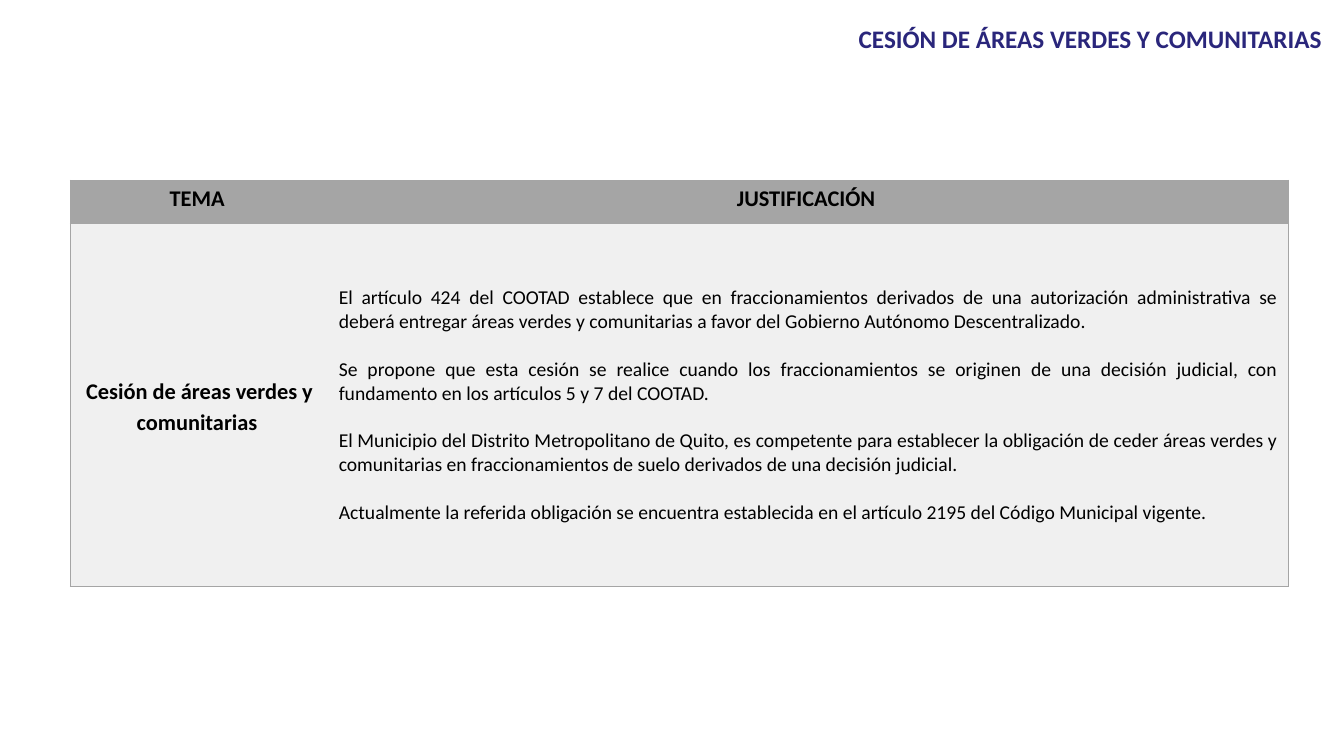
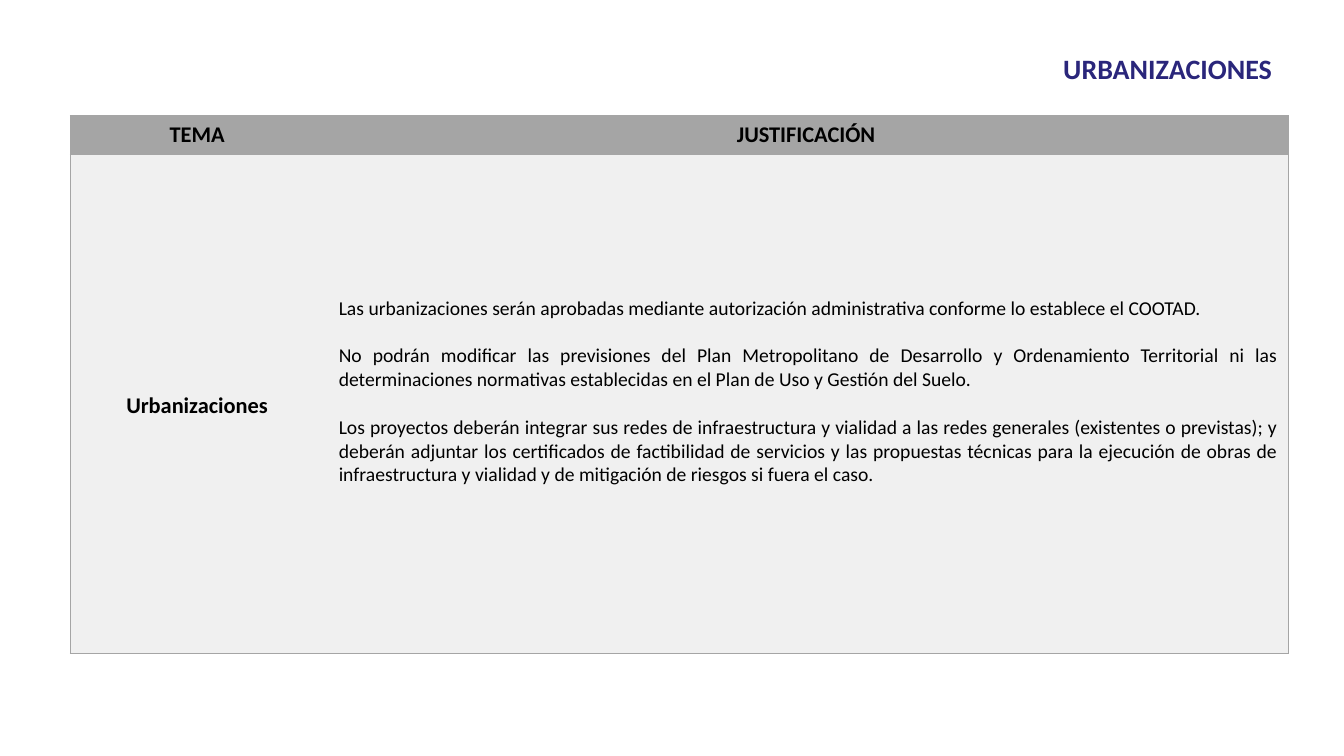
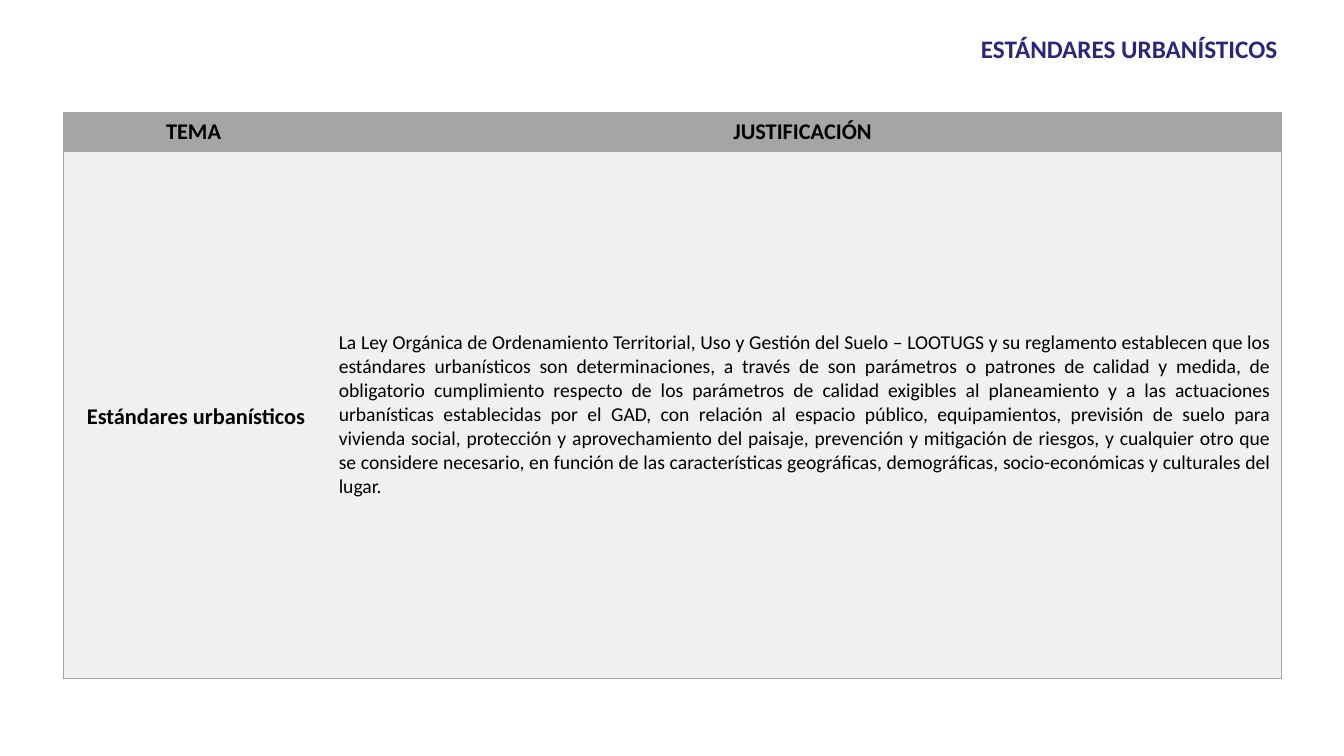
from dataclasses import dataclass

from lxml import etree
from pptx import Presentation
from pptx import util as u
from pptx.dml.color import RGBColor
from pptx.enum import text
from pptx.oxml import ns

# Shared style: 100 px to the inch
EMU_PER_PX = 9144
SLIDE_WIDTH, SLIDE_HEIGHT = 1333, 750
FONT = "Calibri"
NAVY, BLACK, GRAY, PALE = "2A267B", "000000", "A5A5A5", "F0F0F0"
HEADINGS = ("TEMA ", "JUSTIFICACIÓN ")
TITLE_ONLY = 5
BODY_LINE = 17  # height of one body line, in points


@dataclass
class Box:
    left: int
    top: int
    width: int
    height: int


@dataclass
class Topic:
    title: str
    title_box: Box
    title_size: int
    title_spacing: float
    table_left: int
    table_top: int
    columns: tuple[int, int]
    rows: tuple[int, int]
    label: str
    reasons: list[str]
    lines_below: int = 0


TOPICS = [
    Topic(
        "CESIÓN DE ÁREAS VERDES Y COMUNITARIAS", Box(709, 14, 612, 45), 18, 1.15,
        70, 179, (256, 952), (43, 360),
        "Cesión de áreas verdes y comunitarias ",
        [
            "El artículo 424 del COOTAD establece que en fraccionamientos derivados de una "
            "autorización administrativa se deberá entregar áreas verdes y comunitarias a favor "
            "del Gobierno Autónomo Descentralizado.",
            "Se propone que esta cesión se realice cuando los fraccionamientos se originen de una "
            "decisión judicial, con fundamento en los artículos 5 y 7 del COOTAD.",
            "El Municipio del Distrito Metropolitano de Quito, es competente para establecer la "
            "obligación de ceder áreas verdes y comunitarias en fraccionamientos de suelo "
            "derivados de una decisión judicial.",
            "Actualmente la referida obligación se encuentra establecida en el artículo 2195 del "
            "Código Municipal vigente.",
        ],
    ),
    Topic(
        "URBANIZACIONES ", Box(1044, 41, 234, 49), 20, 1.15,
        70, 115, (256, 952), (38, 495),
        "Urbanizaciones ",
        [
            "Las urbanizaciones serán aprobadas mediante autorización administrativa conforme lo "
            "establece el COOTAD.",
            "No podrán modificar las previsiones del Plan Metropolitano de Desarrollo y "
            "Ordenamiento Territorial ni las determinaciones normativas establecidas en el Plan "
            "de Uso y Gestión del Suelo.",
            "Los proyectos deberán integrar sus redes de infraestructura y vialidad a las redes "
            "generales (existentes o previstas); y deberán adjuntar los certificados de "
            "factibilidad de servicios y las propuestas técnicas para la ejecución de obras de "
            "infraestructura y vialidad y de mitigación de riesgos si fuera el caso.",
        ],
        lines_below=1,
    ),
    Topic(
        "ESTÁNDARES URBANÍSTICOS", Box(919, 28, 358, 40), 18, 1.0,
        63, 112, (263, 945), (38, 523),
        "Estándares urbanísticos",
        [
            "La Ley Orgánica de Ordenamiento Territorial, Uso y Gestión del Suelo – LOOTUGS y su "
            "reglamento establecen que los estándares urbanísticos son determinaciones, a través "
            "de son parámetros o patrones de calidad y medida, de obligatorio cumplimiento "
            "respecto de los parámetros de calidad exigibles al planeamiento y a las actuaciones "
            "urbanísticas establecidas por el GAD, con relación al espacio público, "
            "equipamientos, previsión de suelo para vivienda social, protección y "
            "aprovechamiento del paisaje, prevención y mitigación de riesgos, y cualquier otro "
            "que se considere necesario, en función de las características geográficas, "
            "demográficas, socio-económicas y culturales del lugar.",
        ],
    ),
]


def px(length: int) -> u.Emu:
    return u.Emu(length * EMU_PER_PX)


def color(value: str) -> RGBColor:
    return RGBColor.from_string(value)


def format_paragraph(paragraph, size: int, align, bold: bool = True,
                     hue: str = BLACK, spacing: float = 1.0) -> None:
    paragraph.alignment = align
    paragraph.line_spacing = spacing
    for run in paragraph.runs:
        run.font.name = FONT
        run.font.size = u.Pt(size)
        run.font.bold = bold
        run.font.color.rgb = color(hue)


def style_cell(cell, fill: str, outer_side: str) -> None:
    """Rule the cell on all sides but the one between the columns, then fill it."""
    properties = cell._tc.get_or_add_tcPr()
    for side in ("lnL", "lnR", "lnT", "lnB"):
        line = etree.SubElement(properties, ns.qn(f"a:{side}"), w=str(u.Pt(1)))
        if side in (outer_side, "lnT", "lnB"):
            solid = etree.SubElement(line, ns.qn("a:solidFill"))
            etree.SubElement(solid, ns.qn("a:srgbClr"), val=GRAY)
        else:
            etree.SubElement(line, ns.qn("a:noFill"))
    cell.fill.solid()
    cell.fill.fore_color.rgb = color(fill)


def add_title(slide, topic: Topic) -> None:
    title, box = slide.shapes.title, topic.title_box
    title.left, title.top = px(box.left), px(box.top)
    title.width, title.height = px(box.width), px(box.height)
    frame = title.text_frame
    frame.text = topic.title
    frame.word_wrap = True
    frame.auto_size = text.MSO_AUTO_SIZE.SHAPE_TO_FIT_TEXT
    frame.vertical_anchor = text.MSO_ANCHOR.TOP
    frame.margin_left = frame.margin_right = px(10)
    frame.margin_top = frame.margin_bottom = px(5)
    format_paragraph(frame.paragraphs[0], topic.title_size, text.PP_ALIGN.RIGHT,
                     hue=NAVY, spacing=topic.title_spacing)


def add_topic_table(slide, topic: Topic) -> None:
    table = slide.shapes.add_table(
        2, 2, px(topic.table_left), px(topic.table_top),
        px(sum(topic.columns)), px(sum(topic.rows))).table
    table.first_row = table.horz_banding = False
    for column, width in zip(table.columns, topic.columns):
        column.width = px(width)
    for row, height, fill in zip(table.rows, topic.rows, (GRAY, PALE)):
        row.height = px(height)
        for cell, outer_side in zip(row.cells, ("lnL", "lnR")):
            style_cell(cell, fill, outer_side)

    # Heading row
    for cell, heading in zip(table.rows[0].cells, HEADINGS):
        cell.text_frame.text = heading
        format_paragraph(cell.text_frame.paragraphs[0], 16, text.PP_ALIGN.CENTER)

    # Topic and its reasons
    label, reasons = table.rows[1].cells
    label.vertical_anchor = reasons.vertical_anchor = text.MSO_ANCHOR.MIDDLE
    label.margin_left = label.margin_right = px(7)
    label.margin_top = label.margin_bottom = 0
    label.text_frame.text = topic.label
    format_paragraph(label.text_frame.paragraphs[0], 16, text.PP_ALIGN.CENTER, spacing=1.15)

    reasons.margin_bottom = px(5) + u.Pt(BODY_LINE * topic.lines_below)
    reasons.text_frame.text = "\n".join(topic.reasons)
    for index, paragraph in enumerate(reasons.text_frame.paragraphs):
        format_paragraph(paragraph, 14, text.PP_ALIGN.JUSTIFY, bold=False)
        if index:
            paragraph.space_before = u.Pt(BODY_LINE)


def main() -> None:
    presentation = Presentation()
    presentation.slide_width, presentation.slide_height = px(SLIDE_WIDTH), px(SLIDE_HEIGHT)
    for topic in TOPICS:
        slide = presentation.slides.add_slide(presentation.slide_layouts[TITLE_ONLY])
        add_title(slide, topic)
        add_topic_table(slide, topic)
    presentation.save("out.pptx")


if __name__ == "__main__":
    main()
